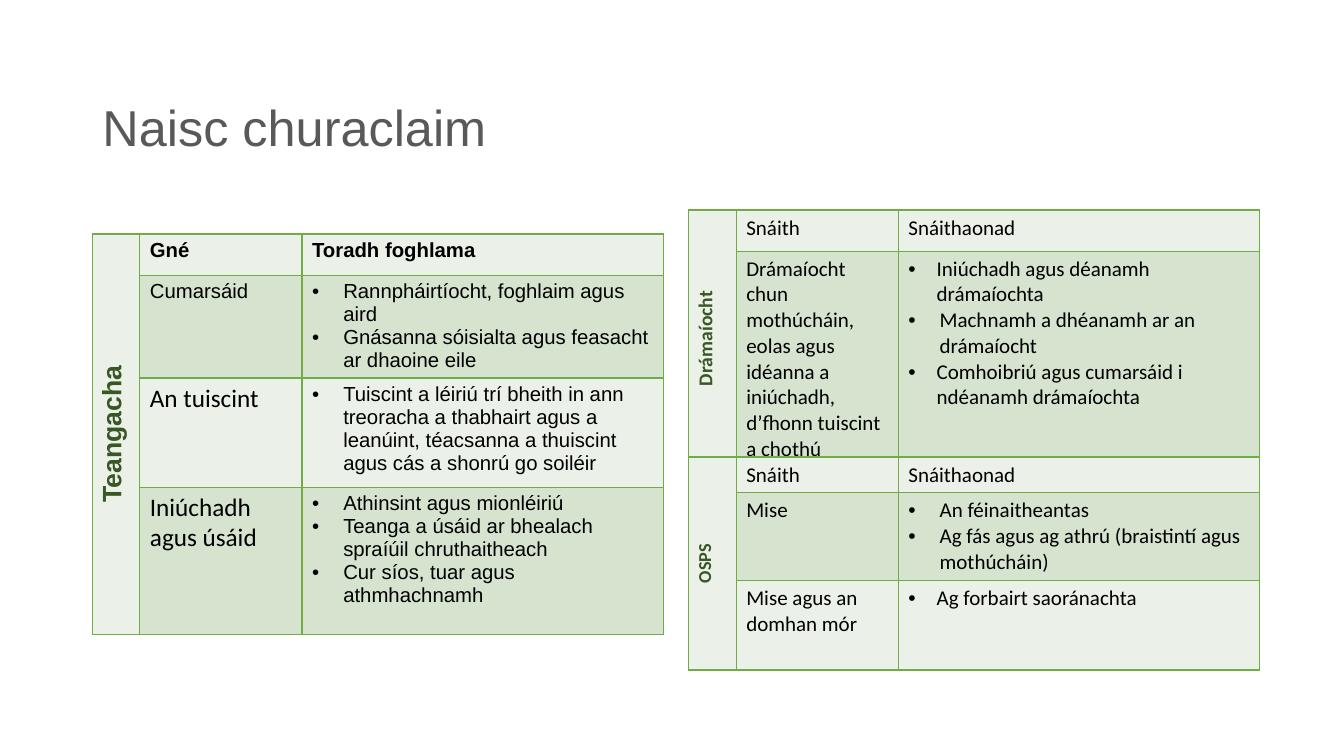
import pptx
import pptx.dml.color
import pptx.enum.text
import pptx.oxml
import pptx.oxml.ns
import pptx.util
from dataclasses import dataclass


@dataclass(frozen=True)
class Theme:
    heading_font: str = "Arial"
    body_font: str = "Calibri"
    title_color: str = "595959"
    text_color: str = "000000"
    label_color: str = "385723"
    border_color: str = "70AD47"
    bands: tuple = ("EBF1E9", "D5E3CF")
    title_size: float = 36
    body_size: float = 15
    compact_size: float = 14.5
    large_size: float = 18
    border_width: float = 1


@dataclass(frozen=True)
class Bullet:
    text: str
    indent: float = 0.31


@dataclass(frozen=True)
class Styled:
    text: str
    font: str
    size: float


def color(value):
    return pptx.dml.color.RGBColor.from_string(value)


def write(paragraph, text, *, font, size, fill, bold=False, align=None, indent=None, spacing=None):
    if indent is not None:
        properties = paragraph._p.get_or_add_pPr()
        properties.set("marL", str(pptx.util.Inches(indent)))
        properties.set("indent", str(-pptx.util.Inches(indent)))
        namespace = pptx.oxml.ns.nsdecls("a")
        properties.append(pptx.oxml.parse_xml(f'<a:buFont {namespace} typeface="Arial"/>'))
        properties.append(pptx.oxml.parse_xml(f'<a:buChar {namespace} char="•"/>'))
    if align is not None:
        paragraph.alignment = align
    if spacing is not None:
        paragraph.line_spacing = spacing
    run = paragraph.add_run()
    run.text = text
    run.font.name = font
    run.font.size = pptx.util.Pt(size)
    run.font.bold = bold
    run.font.color.rgb = color(fill)


class SlideBuilder:
    COLUMNS = 160
    ROWS = 90

    def __init__(self, presentation, theme):
        self.theme = theme
        self.column = presentation.slide_width / self.COLUMNS
        self.row = presentation.slide_height / self.ROWS
        self.slide = presentation.slides.add_slide(presentation.slide_layouts[5])

    def across(self, columns):
        return round(columns * self.column)

    def down(self, rows):
        return round(rows * self.row)

    def title(self, text, left, top, width, height):
        shape = self.slide.shapes.title
        shape.left, shape.top = self.across(left), self.down(top)
        shape.width, shape.height = self.across(width), self.down(height)
        frame = shape.text_frame
        frame.word_wrap = True
        frame.vertical_anchor = pptx.enum.text.MSO_ANCHOR.TOP
        write(frame.paragraphs[0], text, font=self.theme.heading_font, size=self.theme.title_size,
              fill=self.theme.title_color, align=pptx.enum.text.PP_ALIGN.LEFT, spacing=0.9)

    def paint(self, cell, fill):
        properties = cell._tc.get_or_add_tcPr()
        width = pptx.util.Pt(self.theme.border_width)
        for side in ("lnL", "lnR", "lnT", "lnB"):
            properties.append(pptx.oxml.parse_xml(
                f'<a:{side} {pptx.oxml.ns.nsdecls("a")} w="{width}"><a:solidFill>'
                f'<a:srgbClr val="{self.theme.border_color}"/></a:solidFill></a:{side}>'))
        cell.fill.solid()
        cell.fill.fore_color.rgb = color(fill)

    def cell_text(self, cell, content, font, size, bold):
        items = content if isinstance(content, list) else [content]
        for index, item in enumerate(items):
            frame = cell.text_frame
            paragraph = frame.add_paragraph() if index else frame.paragraphs[0]
            styled = isinstance(item, Styled)
            write(paragraph, item if isinstance(item, str) else item.text,
                  font=item.font if styled else font, size=item.size if styled else size,
                  fill=self.theme.text_color, bold=bold,
                  indent=item.indent if isinstance(item, Bullet) else None)

    def subject_table(self, label, label_size, left, top, heights, content, font, size, bold_header=False):
        widths = (5.65, 19.3, 43)
        shape = self.slide.shapes.add_table(
            len(heights), len(widths), self.across(left), self.down(top),
            self.across(sum(widths)), self.down(sum(heights)))
        table = shape.table
        table.first_row = table.horz_banding = False
        for column, width in zip(table.columns, widths):
            column.width = self.across(width)
        for index, (row, height, texts) in enumerate(zip(table.rows, heights, content)):
            row.height = self.down(height)
            self.paint(row.cells[0], self.theme.bands[0])
            for cell, text in zip(list(row.cells)[1:], texts):
                self.paint(cell, self.theme.bands[index % 2])
                self.cell_text(cell, text, font, size, bold_header and index == 0)
        side = table.cell(0, 0)
        side.merge(table.cell(len(heights) - 1, 0))
        side._tc.get_or_add_tcPr().set("vert", "vert270")
        write(side.text_frame.paragraphs[0], label, font=font, size=label_size,
              fill=self.theme.label_color, bold=True, align=pptx.enum.text.PP_ALIGN.CENTER)


def main():
    theme = Theme()
    presentation = pptx.Presentation()
    presentation.slide_width = pptx.util.Inches(13.33)
    presentation.slide_height = pptx.util.Inches(7.5)
    builder = SlideBuilder(presentation, theme)
    builder.title("Naisc churaclaim", 11, 11.65, 138, 10.55)

    drama = [
        ("Snáith", "Snáithaonad"),
        ("Drámaíocht chun mothúcháin, eolas agus idéanna a iniúchadh, d’fhonn tuiscint a chothú",
         [Bullet("Iniúchadh agus déanamh drámaíochta", 0.28),
          Bullet("Machnamh a dhéanamh ar an drámaíocht"),
          Bullet("Comhoibriú agus cumarsáid i ndéanamh drámaíochta", 0.28)]),
    ]
    languages = [
        ("Gné", "Toradh foghlama"),
        ("Cumarsáid",
         [Bullet("Rannpháirtíocht, foghlaim agus aird"),
          Bullet("Gnásanna sóisialta agus feasacht ar dhaoine eile")]),
        (Styled("An tuiscint", theme.body_font, theme.large_size),
         [Bullet("Tuiscint a léiriú trí bheith in ann treoracha a thabhairt agus a leanúint, "
                 "téacsanna a thuiscint agus cás a shonrú go soiléir")]),
        (Styled("Iniúchadh agus úsáid", theme.body_font, theme.large_size),
         [Bullet("Athinsint agus mionléiriú"),
          Bullet("Teanga a úsáid ar bhealach spraíúil chruthaitheach"),
          Bullet("Cur síos, tuar agus athmhachnamh")]),
    ]
    personal = [
        ("Snáith", "Snáithaonad"),
        ("Mise",
         [Bullet("An féinaitheantas"),
          Bullet("Ag fás agus ag athrú (braistintí agus mothúcháin)")]),
        ("Mise agus an domhan mór", [Bullet("Ag forbairt saoránachta", 0.28)]),
    ]
    builder.subject_table("Drámaíocht", 14, 82, 25, (4.9, 25.2), drama,
                          theme.body_font, theme.body_size)
    builder.subject_table("Teangacha", 19, 11, 27.85, (4.9, 12.25, 13, 17.5), languages,
                          theme.heading_font, theme.compact_size, bold_header=True)
    builder.subject_table("OSPS", 13, 82, 54.4, (4.2, 10.45, 10.65), personal,
                          theme.body_font, theme.body_size)
    presentation.save("out.pptx")


if __name__ == "__main__":
    main()
